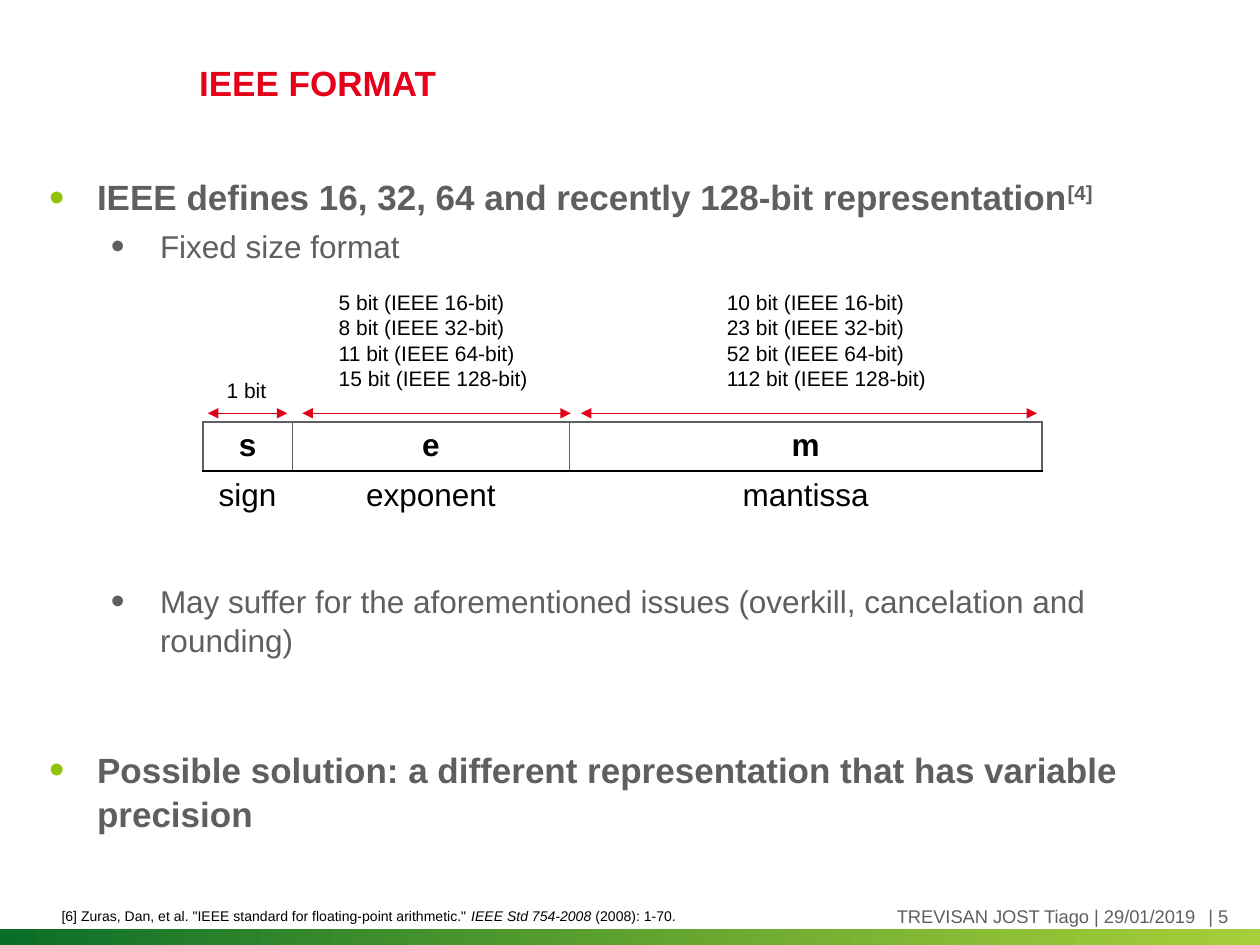
from collections import namedtuple
from lxml import etree
from pptx import Presentation
from pptx import util as u
from pptx.dml.color import RGBColor
from pptx.enum import shapes, text
from pptx.oxml import ns

RED = RGBColor(0xE6, 0x00, 0x19)
ROSE = RGBColor(0xE1, 0x00, 0x18)
GRAY = RGBColor(0x5F, 0x5F, 0x5F)
INK = RGBColor(0x00, 0x00, 0x00)
PINE = RGBColor(0x0A, 0x6E, 0x28)
LIME = RGBColor(0x91, 0xC3, 0x0A)
CELL = u.Inches(0.1)
COLS, ROWS = 100, 75
LEFT, MID, RIGHT = text.PP_ALIGN.LEFT, text.PP_ALIGN.CENTER, text.PP_ALIGN.RIGHT
Box = namedtuple("Box", "x y w h")
FIELDS = [
    ("s", "sign", 7.1, 0.4, 6.7),
    ("e", "exponent", 22, 7.9, 29.2),
    ("m", "mantissa", 37.5, 30, 66.2),
]
SIZES = [16, 32, 64, 128]
BITS = [(9.8, [5, 8, 11, 15]), (40.6, [10, 23, 52, 112])]


def part(box, x, y, w, h):
    """Return a box placed inside another one."""
    return Box(box.x + x, box.y + y, w, h)


def span(box):
    """Turn grid cells into slide lengths."""
    return [int(n * CELL) for n in box]


def add(node, tag, **attrs):
    """Append a drawing element with its attributes."""
    return etree.SubElement(node, ns.qn("a:" + tag), **attrs)


def write(par, words, size=12, ink=INK, bold=False, ital=False, lift=0, side=LEFT):
    """Add one run of formatted text to a paragraph."""
    par.alignment = side
    run = par.add_run()
    run.text = words
    font = run.font
    font.name, font.size, font.bold, font.italic = "Arial", u.Pt(size), bold, ital
    font.color.rgb = ink
    if lift:
        run._r.get_or_add_rPr().set("baseline", str(lift * 1000))


def clear(frame, anchor):
    """Drop the margins of a text frame and fix its size."""
    frame.margin_left = frame.margin_right = frame.margin_top = frame.margin_bottom = 0
    frame.auto_size, frame.word_wrap = text.MSO_AUTO_SIZE.NONE, True
    frame.vertical_anchor = anchor


def note(slide, box, lines, **form):
    """Add a text box with one paragraph per line."""
    frame = slide.shapes.add_textbox(*span(box)).text_frame
    frame.word_wrap = True
    for k, line in enumerate(lines):
        write(frame.add_paragraph() if k else frame.paragraphs[0], line, **form)
    return frame


def dot(par, level, ink, left, hang):
    """Give a paragraph its level, indent and bullet."""
    par.level = level
    props = par._p.get_or_add_pPr()
    props.set("marL", str(u.Inches(left)))
    props.set("indent", str(-u.Inches(hang)))
    add(add(props, "buClr"), "srgbClr", val=str(ink))
    add(props, "buSzPct", val="125000")
    add(props, "buFont", typeface="Arial")
    add(props, "buChar", char="•")


def head(slide, box):
    """Fill the title."""
    title = slide.shapes.title
    title.left, title.top, title.width, title.height = span(box)
    clear(title.text_frame, text.MSO_ANCHOR.MIDDLE)
    write(title.text_frame.paragraphs[0], "IEEE FORMAT", size=20, ink=RED, bold=True)


def body(slide, box):
    """Fill the bullet list, leaving room for the bit layout."""
    holder = slide.placeholders[1]
    holder.left, holder.top, holder.width, holder.height = span(box)
    frame = holder.text_frame
    clear(frame, text.MSO_ANCHOR.TOP)
    items = [
        (0, 0, "IEEE defines 16, 32, 64 and recently 128-bit representation"),
        (1, 0, "Fixed size format"),
        (1, 180, "May suffer for the aforementioned issues (overkill, cancelation and rounding)"),
        (0, 50, "Possible solution: a different representation that has variable precision"),
    ]
    for k, (level, gap, words) in enumerate(items):
        par = frame.add_paragraph() if k else frame.paragraphs[0]
        if level:
            dot(par, 1, GRAY, 0.88, 0.39)
        else:
            dot(par, 0, LIME, 0.38, 0.38)
        par.line_spacing = 1.05
        par.space_before, par.space_after = u.Pt(gap), u.Pt(0 if level else 4)
        write(par, words, size=18 if level else 20, ink=GRAY, bold=not level)
    write(frame.paragraphs[0], "[4]", size=20, ink=GRAY, bold=True, lift=30)


def edge(cell, **inks):
    """Set the four borders of a cell; a missing side has no line."""
    props = cell._tc.get_or_add_tcPr()
    for k, side in enumerate("LRTB"):
        line = etree.Element(ns.qn("a:ln" + side), w=str(u.Pt(1)))
        if side in inks:
            add(add(line, "solidFill"), "srgbClr", val=str(inks[side]))
        else:
            add(line, "noFill")
        props.insert(k, line)


def arrow(slide, start, end, row):
    """Draw a level line with a head at both ends."""
    line = slide.shapes.add_connector(
        shapes.MSO_CONNECTOR.STRAIGHT, *span((start, row, end, row)))
    line.line.color.rgb, line.line.width = ROSE, u.Pt(0.75)
    stroke = line.line._get_or_add_ln()
    add(stroke, "headEnd", type="triangle")
    add(stroke, "tailEnd", type="triangle")
    add(line._element.spPr, "effectLst")


def bits(slide, box):
    """Draw the bit fields with their widths above."""
    frame = part(box, 0, 11, box.w, 7.8)
    grid = slide.shapes.add_table(2, len(FIELDS), *span(frame)).table
    grid.first_row = grid.horz_banding = False
    for row in grid.rows:
        row.height = int(frame.h / 2 * CELL)
    for k, (sign, name, wide, start, end) in enumerate(FIELDS):
        grid.columns[k].width = int(wide * CELL)
        for r, words in enumerate((sign, name)):
            cell = grid.cell(r, k)
            cell.fill.background()
            write(cell.text_frame.paragraphs[0], words, size=18, bold=not r, side=MID)
        edge(grid.cell(0, k), L=GRAY, R=GRAY, T=GRAY, B=INK)
        edge(grid.cell(1, k), T=INK)
        arrow(slide, box.x + start, box.x + end, box.y + 10.3)
    note(slide, part(box, 0.9, 7, 10.2, 3), ["1 bit"])
    for x, counts in BITS:
        lines = [f"{n} bit (IEEE {size}-bit)" for n, size in zip(counts, SIZES)]
        note(slide, part(box, x, 0, 21.3, 9), lines)


def foot(slide, box):
    """Place the source, the author line, the page mark and the band."""
    band = slide.shapes.add_shape(
        shapes.MSO_SHAPE.RECTANGLE, *span(part(box, 0, box.h - 1.2, box.w, 1.2)))
    band.shadow.inherit = False
    band.line.fill.background()
    band.fill.gradient()
    band.fill.gradient_angle = 0
    for stop, ink in zip(band.fill.gradient_stops, (PINE, LIME)):
        stop.color.rgb = ink
    tint = list(band._element.spPr.iter(ns.qn("a:srgbClr")))[-1]
    add(tint, "alpha", val="80000")
    page = part(box, 95.9, 0.3, 4, 1.8)
    name = part(box, 0, 0.3, 94.9, 1.8)
    for spot, words, side in ((page, "| 5", LEFT), (name, "TREVISAN JOST Tiago | 29/01/2019", RIGHT)):
        clear(note(slide, spot, [words], size=10.5, ink=GRAY, side=side), text.MSO_ANCHOR.MIDDLE)
    cite = note(slide, part(box, 3.9, 0, 66.1, 2.4), [
        '[6] Zuras, Dan, et al. "IEEE standard for floating-point arithmetic." '], size=8)
    write(cite.paragraphs[0], "IEEE Std 754-2008", size=8, ital=True)
    write(cite.paragraphs[0], " (2008): 1-70.", size=8)


def main():
    """Build the slide and save it."""
    deck = Presentation()
    deck.slide_width, deck.slide_height = COLS * CELL, ROWS * CELL
    slide = deck.slides.add_slide(deck.slide_layouts[1])
    head(slide, Box(15.8, 2.3, 80.2, 8.5))
    body(slide, Box(3.9, 13.8, 92.1, 55.2))
    bits(slide, Box(16.1, 22.5, 66.6, 18.8))
    foot(slide, Box(0, 71.5, COLS, 3.5))
    deck.save("out.pptx")


if __name__ == "__main__":
    main()
